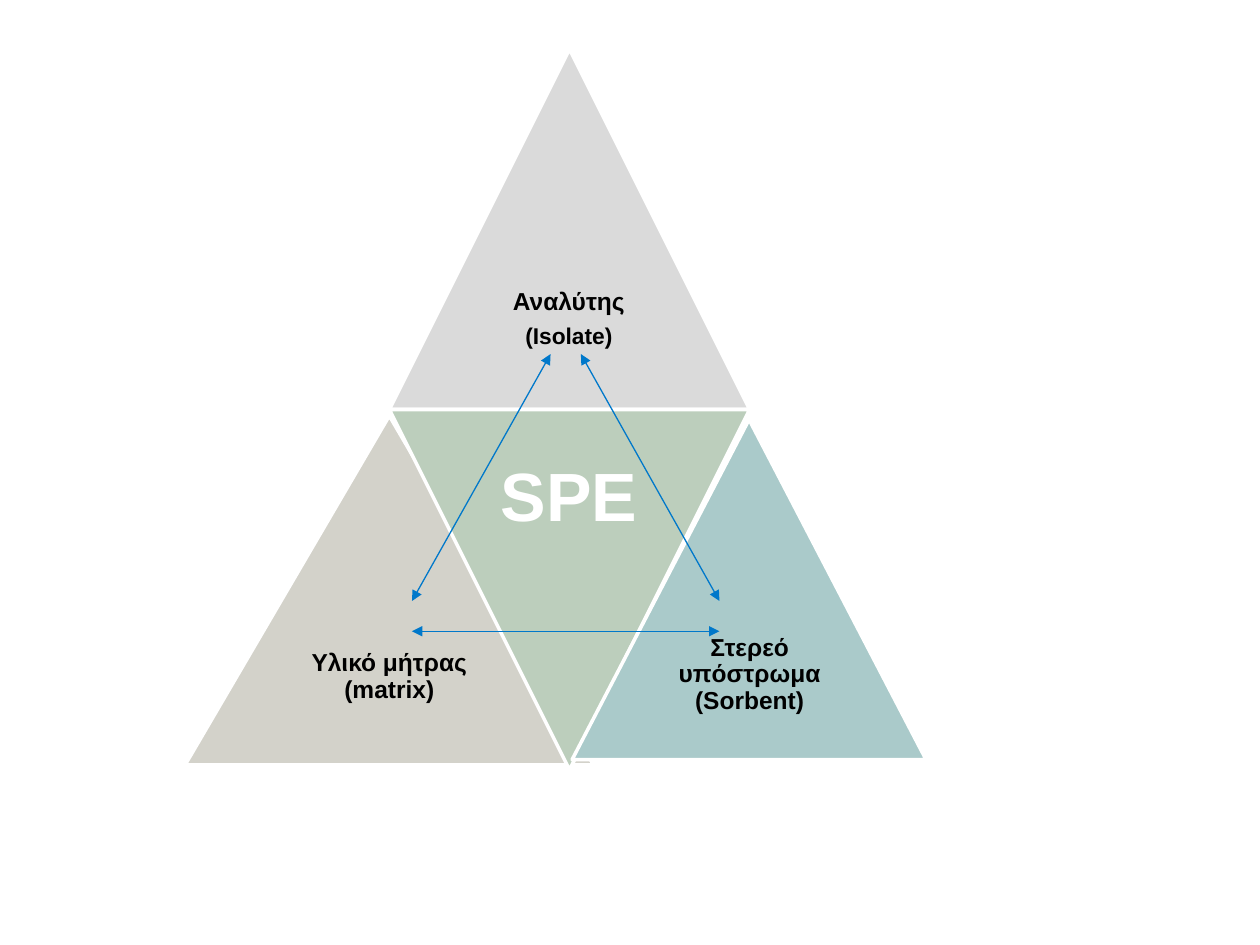
"""Build a slide with the three parts of solid phase extraction around SPE."""
from lxml import etree
from pptx import Presentation
from pptx.dml.color import RGBColor
from pptx.enum.shapes import MSO_CONNECTOR, MSO_SHAPE
from pptx.enum.text import MSO_ANCHOR, PP_ALIGN
from pptx.oxml.ns import qn
from pptx.util import Inches, Pt

TRIANGLE = MSO_SHAPE.ISOSCELES_TRIANGLE
STRAIGHT = MSO_CONNECTOR.STRAIGHT
MIDDLE = MSO_ANCHOR.MIDDLE
CENTER = PP_ALIGN.CENTER

BLACK = RGBColor(0x00, 0x00, 0x00)
WHITE = RGBColor(0xFF, 0xFF, 0xFF)
GREY = RGBColor(0xDA, 0xDA, 0xDA)
SAND = RGBColor(0xD3, 0xD2, 0xCA)
GREEN = RGBColor(0xBC, 0xCE, 0xBC)
TEAL = RGBColor(0xAA, 0xCA, 0xCA)
BLUE = RGBColor(0x00, 0x78, 0xCA)


class TriangleSlide:
    """Hold the style and the current slide."""

    font = "Arial"

    def __init__(self, deck):
        """Add a blank slide to the deck."""
        self.page = deck.slides.add_slide(deck.slide_layouts[6])

    def triangle(self, left, top, width, height, color, rotation=0):
        """Draw a filled triangle with a white outline."""
        shape = self.page.shapes.add_shape(
            TRIANGLE, Inches(left), Inches(top), Inches(width), Inches(height))
        shape.shadow.inherit = False
        shape.rotation = rotation
        shape.fill.solid()
        shape.fill.fore_color.rgb = color
        shape.line.color.rgb = WHITE
        shape.line.width = Pt(2)

    def label(self, left, top, width, height, lines, color=BLACK, inset=0.06):
        """Write centred bold paragraphs given as text and size pairs."""
        box = self.page.shapes.add_textbox(
            Inches(left), Inches(top), Inches(width), Inches(height))
        frame = box.text_frame
        frame.word_wrap = True
        frame.vertical_anchor = MIDDLE
        frame.margin_left = frame.margin_right = Inches(inset)
        frame.margin_top = frame.margin_bottom = Inches(inset)
        for index, (text, size) in enumerate(lines):
            para = frame.add_paragraph() if index else frame.paragraphs[0]
            para.alignment = CENTER
            para.line_spacing = 0.9
            para.space_after = Pt(round(size * 0.35))
            span = para.add_run()
            span.text = text
            span.font.name = self.font
            span.font.size = Pt(size)
            span.font.bold = True
            span.font.color.rgb = color

    def arrow(self, start, end):
        """Draw a thin line with an arrowhead at both ends."""
        line = self.page.shapes.add_connector(
            STRAIGHT, *(Inches(value) for value in (*start, *end)))
        line.line.color.rgb = BLUE
        line.line.width = Pt(0.75)
        outline = line.line._get_or_add_ln()
        for tag in ("a:headEnd", "a:tailEnd"):
            etree.SubElement(outline, qn(tag), type="triangle")
        etree.SubElement(line._element.spPr, qn("a:effectLst"))


def main():
    """Build and save the deck."""
    deck = Presentation()
    deck.slide_width, deck.slide_height = Inches(10), Inches(7.5)
    slide = TriangleSlide(deck)

    slide.triangle(3.09, 0.39, 2.86, 2.86, GREY)
    slide.label(3.8, 1.82, 1.43, 1.43, [("Αναλύτης", 14), ("(Isolate)", 13)])
    slide.triangle(1.47, 3.3, 3.24, 2.77, SAND)
    slide.label(2.28, 4.68, 1.62, 1.39, [("Υλικό μήτρας (matrix)", 14)])
    slide.triangle(3.09, 3.25, 2.86, 2.86, GREEN, rotation=180)
    slide.label(3.8, 3.25, 1.43, 1.43, [("SPE", 39)], WHITE, inset=0.16)
    slide.triangle(4.54, 3.33, 2.81, 2.7, TEAL)
    slide.label(5.25, 4.68, 1.4, 1.35, [("Στερεό υπόστρωμα (Sorbent)", 14)])

    slide.arrow((4.37, 2.81), (3.27, 4.77))
    slide.arrow((3.27, 5.01), (5.71, 5.01))
    slide.arrow((4.61, 2.81), (5.71, 4.77))
    deck.save("out.pptx")


if __name__ == "__main__":
    main()
